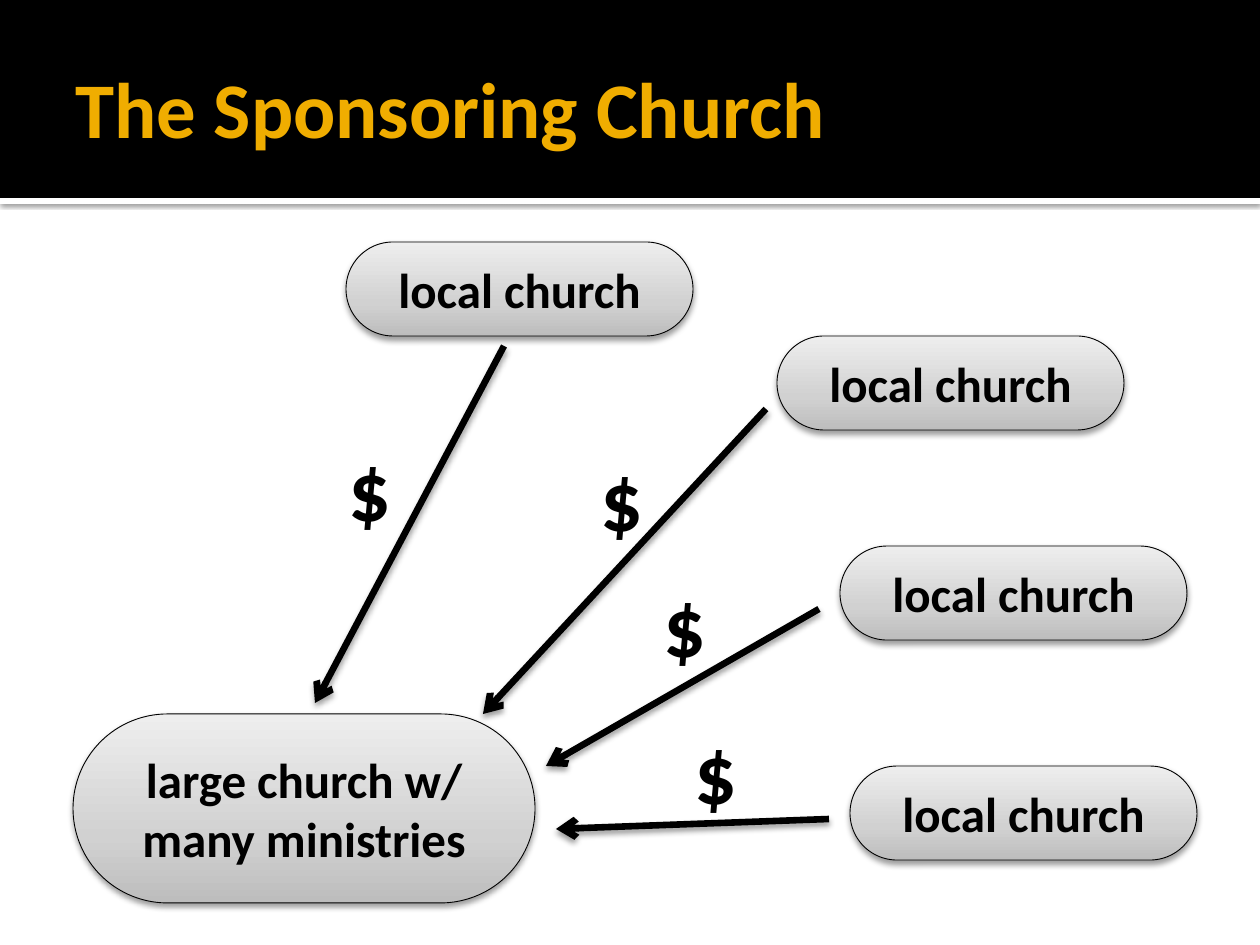
from copy import deepcopy
from lxml import etree
from pptx import Presentation, util as u
from pptx.dml.color import RGBColor
from pptx.enum import shapes, text
from pptx.oxml.ns import qn

BLACK = RGBColor(0x00, 0x00, 0x00)
WHITE = RGBColor(0xFF, 0xFF, 0xFF)
GOLD = RGBColor(0xF0, 0xAD, 0x00)
GREYS = [(0, RGBColor(0xBD, 0xBD, 0xBD)),
         (0.35, RGBColor(0xD1, 0xD1, 0xD1)),
         (1, RGBColor(0xEE, 0xEE, 0xEE))]
PX = 914400 / 126


def write(shape, words, size, color=BLACK, align=text.PP_ALIGN.LEFT,
          anchor=text.MSO_ANCHOR.MIDDLE, wrap=True):
    frame = shape.text_frame
    frame.word_wrap = wrap
    frame.vertical_anchor = anchor
    para = frame.paragraphs[0]
    para.alignment = align
    run = para.add_run()
    run.text = words
    font = run.font
    font.name, font.size, font.bold = "Calibri", u.Pt(size), True
    font.color.rgb = color


def shade(shape, blur, dist, alpha):
    """Add a black shadow that falls straight down; the line must be set first."""
    effect = etree.SubElement(shape._element.spPr, qn("a:effectLst"))
    outer = etree.SubElement(effect, qn("a:outerShdw"), blurRad=str(u.Pt(blur)),
                             dist=str(u.Pt(dist)), dir="5400000", rotWithShape="0")
    tone = etree.SubElement(outer, qn("a:srgbClr"), val=str(BLACK))
    etree.SubElement(tone, qn("a:alpha"), val=str(alpha * 1000))


deck = Presentation()
deck.slide_width, deck.slide_height = u.Inches(10), u.Inches(7.5)
slide = deck.slides.add_slide(deck.slide_layouts[6])
items = slide.shapes

# Header: white strip with a shadow, then the black band
for top, high, color in [(198, 6, WHITE), (0, 198, BLACK)]:
    bar = items.add_shape(shapes.MSO_SHAPE.RECTANGLE, 0, round(top * PX),
                          deck.slide_width, round(high * PX))
    bar.fill.solid()
    bar.fill.fore_color.rgb = color
    bar.line.fill.background()
    if color == WHITE:
        shade(bar, 2.5, 0.8, 60)
    else:
        bar.shadow.inherit = False

# Title
title = items.add_textbox(*[round(n * PX) for n in (63, 21, 1134, 173)])
title.text_frame.margin_right = u.Inches(0.05)
write(title, "The Sponsoring Church", 45, color=GOLD)

# Churches
local = "local church"
nodes = [(346, 242, 347, 94, local),
         (777, 336, 347, 94, local),
         (840, 546, 347, 94, local),
         (850, 766, 347, 94, local),
         (73, 714, 462, 189, "large church w/ many ministries")]
for *area, words in nodes:
    node = items.add_shape(shapes.MSO_SHAPE.ROUNDED_RECTANGLE,
                           *[round(n * PX) for n in area])
    node.adjustments[0] = 0.5
    node.fill.gradient()
    node.fill.gradient_angle = 90
    stops = node._element.spPr.find(qn("a:gradFill")).find(qn("a:gsLst"))
    stops.append(deepcopy(stops[0]))
    for stop, (spot, grey) in zip(node.fill.gradient_stops, GREYS):
        stop.position = spot
        stop.color.rgb = grey
    node.line.color.rgb = BLACK
    node.line.width = u.Pt(0.5)
    shade(node, 3.5, 2, 38)
    write(node, words, 28, align=text.PP_ALIGN.CENTER)

# Arrows: the head is at the large church, where each line begins
for ends in [(315, 703, 504, 346), (483, 714, 766, 409),
             (546, 766, 819, 609), (556, 829, 829, 819)]:
    arrow = items.add_connector(shapes.MSO_CONNECTOR.STRAIGHT,
                                *[round(n * PX) for n in ends])
    arrow.line.color.rgb = BLACK
    arrow.line.width = u.Pt(3.78)
    etree.SubElement(arrow.line._get_or_add_ln(), qn("a:headEnd"), type="arrow")
    shade(arrow, 3.5, 2, 38)

# Dollar signs
for left, top in [(336, 431), (588, 441), (651, 567), (682, 714)]:
    sign = items.add_textbox(*[round(n * PX) for n in (left, top, 71, 115)])
    write(sign, "$", 48, anchor=text.MSO_ANCHOR.TOP, wrap=False)
    sign.text_frame.auto_size = text.MSO_AUTO_SIZE.SHAPE_TO_FIT_TEXT

deck.save("out.pptx")
